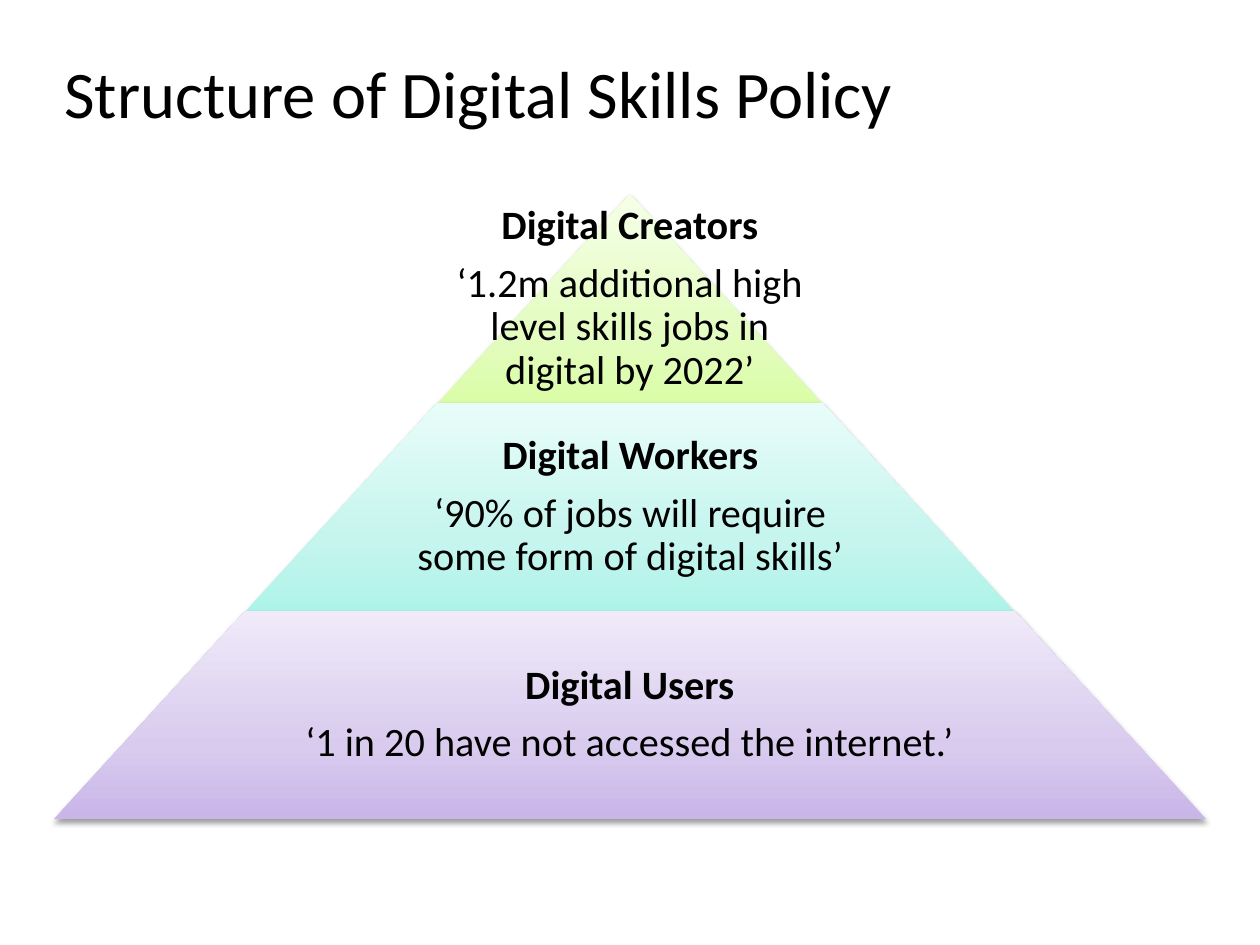
"""Build the digital skills policy pyramid slide."""
import copy

import lxml.etree
import pptx
import pptx.dml.color
import pptx.enum.shapes
import pptx.enum.text
import pptx.oxml.ns
import pptx.util

PX = 914400 // 126
COLORS = {
    "text": "000000",
    "creators": ("DAFDA7", "E4FCC2", "F5FFE7"),
    "workers": ("AEF3E9", "C6F5EE", "E8FCF9"),
    "users": ("C9B5E8", "D8CBEE", "F0EAF9"),
}
STOPS = (0, 0.35, 1)
CENTER, TOP, TIER_HEIGHT, TIER_STEP = 630, 195, 208, 384
TIERS = [
    ("creators", 384, "Digital Creators", "‘1.2m additional high level skills jobs in digital by 2022’"),
    ("workers", 499, "Digital Workers", "‘90% of jobs will require some form of digital skills’"),
    ("users", 748, "Digital Users", "‘1 in 20 have not accessed the internet.’"),
]


class Deck:
    """Slide style and the slide being drawn."""

    def __init__(self, slide, font):
        self.slide = slide
        self.font = font

    def box(self, left, top, width, height):
        return [length * PX for length in (left, top, width, height)]

    def text(self, area, lines, size, inset=None, align=None, spacing=None, after=None):
        frame = self.slide.shapes.add_textbox(*self.box(*area)).text_frame
        frame.word_wrap = True
        frame.vertical_anchor = pptx.enum.text.MSO_ANCHOR.MIDDLE
        if inset is not None:
            frame.margin_left = frame.margin_right = inset * PX
            frame.margin_top = frame.margin_bottom = inset * PX
        for index, (words, bold) in enumerate(lines):
            paragraph = frame.add_paragraph() if index else frame.paragraphs[0]
            paragraph.alignment = align
            paragraph.line_spacing = spacing
            paragraph.space_after = after
            run = paragraph.add_run()
            run.text = words
            run.font.name = self.font
            run.font.size = pptx.util.Pt(size)
            run.font.bold = bold
            run.font.color.rgb = pptx.dml.color.RGBColor.from_string(COLORS["text"])

    def tier(self, area, colors):
        tier = self.slide.shapes.add_shape(
            pptx.enum.shapes.MSO_SHAPE.TRAPEZOID, *self.box(*area))
        tier.adjustments[0] = 0.92
        tier.line.fill.background()
        tier.fill.gradient()
        tier.fill.gradient_angle = 90
        stop_list = tier._element.spPr.find(".//" + pptx.oxml.ns.qn("a:gsLst"))
        stop_list.append(copy.deepcopy(stop_list[-1]))
        for stop, position, color in zip(tier.fill.gradient_stops, STOPS, colors):
            stop.position = position
            stop.color.rgb = pptx.dml.color.RGBColor.from_string(color)
        self.shadow(tier)

    def shadow(self, shape):
        shape.shadow.inherit = False
        qn = pptx.oxml.ns.qn
        effects = shape._element.spPr.find(qn("a:effectLst"))
        outer = lxml.etree.SubElement(
            effects, qn("a:outerShdw"), blurRad=str(pptx.util.Pt(3.1)),
            dist=str(pptx.util.Pt(1.6)), dir="5400000", rotWithShape="0")
        tint = lxml.etree.SubElement(outer, qn("a:srgbClr"), val=COLORS["text"])
        lxml.etree.SubElement(tint, qn("a:alpha"), val="38000")


def main():
    presentation = pptx.Presentation()
    presentation.slide_width = pptx.util.Inches(10)
    presentation.slide_height = pptx.util.Inches(7.5)
    deck = Deck(presentation.slides.add_slide(presentation.slide_layouts[6]), "Calibri")
    deck.text((52, 38, 936, 107), [("Structure of Digital Skills Policy", False)], 38)
    for level, (name, text_width, heading, claim) in enumerate(TIERS):
        top = TOP + level * TIER_HEIGHT
        width = (level + 1) * TIER_STEP
        deck.tier((CENTER - width // 2, top, width, TIER_HEIGHT), COLORS[name])
        deck.text((CENTER - text_width // 2, top, text_width, TIER_HEIGHT),
                  [(heading, True), (claim, False)], 23, inset=4,
                  align=pptx.enum.text.PP_ALIGN.CENTER, spacing=0.9,
                  after=pptx.util.Pt(8))
    presentation.save("out.pptx")


if __name__ == "__main__":
    main()
